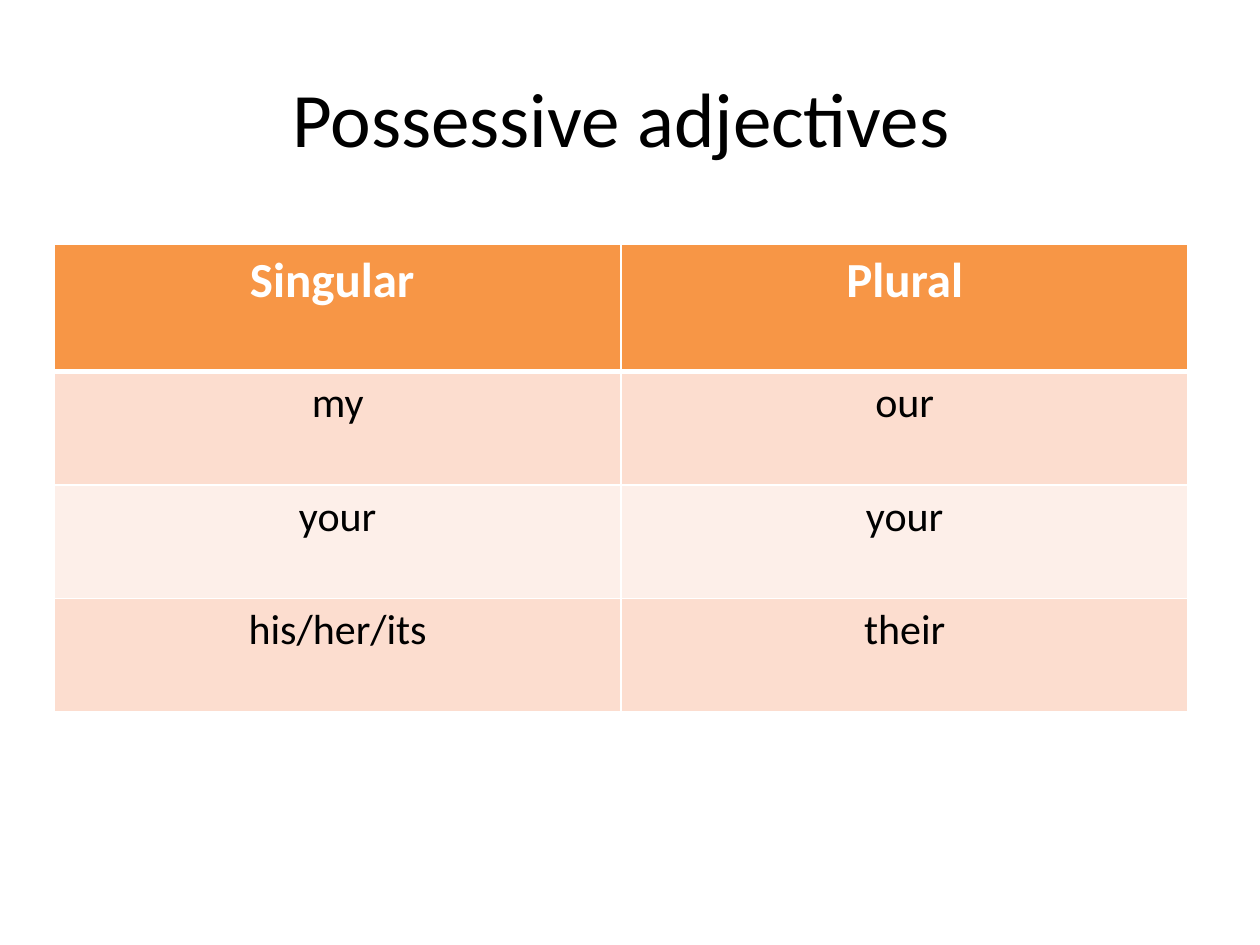
import pptx
import pptx.dml.color
import pptx.enum.text
import pptx.oxml.ns
import pptx.util
from dataclasses import dataclass
from lxml import etree
from pptx.util import Inches


@dataclass(frozen=True)
class Theme:
    font: str = "Calibri"
    title_size: int = 44
    header_size: int = 28
    body_size: int = 24
    black: str = "000000"
    white: str = "FFFFFF"
    header_fill: str = "F79646"
    bands: tuple = ("FCDDCF", "FDEFE9")
    thin: int = 1
    thick: int = 3


theme = Theme()


def write_text(frame, text, size, color=theme.black, bold=False):
    paragraph = frame.paragraphs[0]
    paragraph.alignment = pptx.enum.text.PP_ALIGN.CENTER
    run = paragraph.add_run()
    run.text = text
    run.font.name = theme.font
    run.font.size = pptx.util.Pt(size)
    run.font.bold = bold
    run.font.color.rgb = pptx.dml.color.RGBColor.from_string(color)


def add_border(cell, side, width):
    """Draw one white cell edge; side is L, R, T or B and width is in points."""
    qn = pptx.oxml.ns.qn
    properties = cell._tc.get_or_add_tcPr()
    line = etree.SubElement(properties, qn(f"a:ln{side}"), w=str(pptx.util.Pt(width)))
    fill = etree.SubElement(line, qn("a:solidFill"))
    etree.SubElement(fill, qn("a:srgbClr"), val=theme.white)


presentation = pptx.Presentation()
presentation.slide_width = Inches(10)
presentation.slide_height = Inches(7.5)
slide = presentation.slides.add_slide(presentation.slide_layouts[6])

title = slide.shapes.add_textbox(Inches(0.5), Inches(0.3), Inches(9), Inches(1.25))
title.text_frame.word_wrap = True
title.text_frame.vertical_anchor = pptx.enum.text.MSO_ANCHOR.MIDDLE
write_text(title.text_frame, "Possessive adjectives ", size=theme.title_size)

adjectives = [
    ("Singular ", "Plural"),
    ("my", "our"),
    ("your", "your"),
    ("his/her/its", "their"),
]
header_height, body_height = Inches(1.01), Inches(0.9)
table = slide.shapes.add_table(
    len(adjectives), 2, Inches(0.43), Inches(1.94), Inches(9),
    header_height + body_height * (len(adjectives) - 1),
).table

for row, words in enumerate(adjectives):
    is_header = row == 0
    table.rows[row].height = header_height if is_header else body_height
    for column, word in enumerate(words):
        cell = table.cell(row, column)
        add_border(cell, "L", theme.thin)
        add_border(cell, "R", theme.thin)
        add_border(cell, "T", theme.thick if row == 1 else theme.thin)
        add_border(cell, "B", theme.thick if is_header else theme.thin)
        cell.fill.solid()
        cell.fill.fore_color.rgb = pptx.dml.color.RGBColor.from_string(
            theme.header_fill if is_header else theme.bands[(row - 1) % 2]
        )
        write_text(
            cell.text_frame, word,
            size=theme.header_size if is_header else theme.body_size,
            color=theme.white if is_header else theme.black,
            bold=is_header,
        )

presentation.save("out.pptx")
